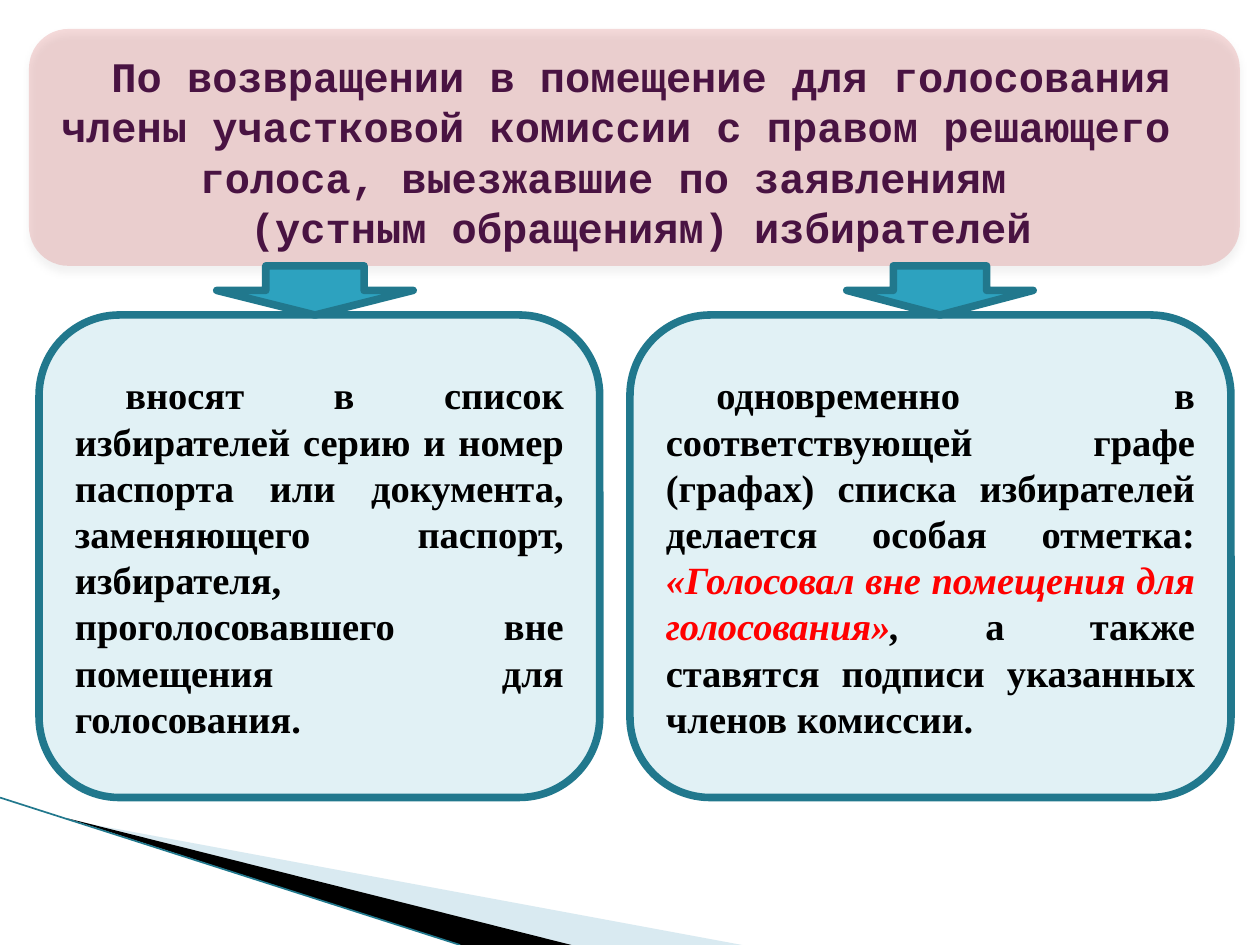
import pptx
import pptx.util
import pptx.dml.color
import pptx.enum.shapes
import pptx.enum.text
import pptx.oxml.ns
from lxml import etree

RGBColor = pptx.dml.color.RGBColor
SHAPE = pptx.enum.shapes.MSO_SHAPE
ALIGN = pptx.enum.text.PP_ALIGN
ANCHOR = pptx.enum.text.MSO_ANCHOR
qn = pptx.oxml.ns.qn

WHITE = RGBColor(0xFF, 0xFF, 0xFF)
BLACK = RGBColor(0, 0, 0)
RED = RGBColor(0xFF, 0, 0)
CRIMSON = RGBColor(0xC0, 0, 0)
PLUM = RGBColor(0x3A, 0x19, 0x53)
TEAL = RGBColor(0x2D, 0xA2, 0xBF)
DARK_TEAL = RGBColor(0x21, 0x78, 0x8D)
PALE_BLUE = RGBColor(0xA0, 0xCB, 0xDC)

CELL = pptx.util.Inches(0.1)
COLUMNS, ROWS = 100, 75

TITLE = [
    "По возвращении в помещение для голосования члены участковой комиссии "
    "с правом решающего голоса, выезжавшие по заявлениям ",
    "(устным обращениям) избирателей",
]
RECORD = [
    ("вносят в список избирателей серию и номер паспорта или документа, "
     "заменяющего паспорт, избирателя, проголосовавшего вне помещения "
     "для голосования. ", BLACK, False),
]
MARK = [
    ("одновременно в соответствующей графе (графах) списка избирателей "
     "делается особая отметка: ", BLACK, False),
    ("«Голосовал вне помещения для голосования»", RED, True),
    (", ", BLACK, True),
    ("а также ставятся подписи указанных членов комиссии.", BLACK, False),
]


def grid(*cells):
    """Turn grid cells into lengths."""
    return [round(cell * CELL) for cell in cells]


def paint(shape, color, opacity=100, outlined=False):
    """Fill a shape, with an optional thick outline and no shadow."""
    shape.shadow.inherit = False
    shape.fill.solid()
    shape.fill.fore_color.rgb = color
    if opacity < 100:
        tint = shape.element.spPr.find(qn("a:solidFill"))[0]
        etree.SubElement(tint, qn("a:alpha"), val=str(opacity * 1000))
    if outlined:
        shape.line.color.rgb = DARK_TEAL
        shape.line.width = pptx.util.Pt(4.33)
    else:
        shape.line.fill.background()


def write(para, spans, font, size, align):
    """Write bold spans into a paragraph with an indented first line."""
    properties = para._p.get_or_add_pPr()
    properties.set("marL", "0")
    properties.set("indent", str(4 * CELL))
    para.alignment = align
    para.line_spacing = 1.0
    para.space_before = pptx.util.Pt(0)
    for text, color, italic in spans:
        span = para.add_run()
        span.text = text
        span.font.name = font
        span.font.size = pptx.util.Pt(size)
        span.font.bold = True
        span.font.italic = italic
        span.font.color.rgb = color


def add_corner(page, left, top, width, height):
    """Draw the wedges and the line in the bottom left corner."""
    wedges = [
        (PALE_BLUE, 40, [(0.09, 0.15), (1, 1), (0.76, 1)]),
        (BLACK, 100, [(0.09, 0.14), (0.77, 1), (0.62, 1)]),
    ]
    for color, opacity, shares in wedges:
        points = [grid(left + x * width, top + y * height) for x, y in shares]
        builder = page.shapes.build_freeform(*points[0])
        builder.add_line_segments(points[1:])
        paint(builder.convert_to_shape(), color, opacity)
    line = page.shapes.add_connector(
        pptx.enum.shapes.MSO_CONNECTOR.STRAIGHT,
        *grid(left, top, left + 0.62 * width, top + height))
    line.line.color.rgb = DARK_TEAL
    line.line.width = pptx.util.Pt(0.95)
    etree.SubElement(line.element.spPr, qn("a:effectLst"))


def add_title(page, left, top, width, height):
    """Place the title and lay the translucent banner over it."""
    title = page.shapes.title
    title.left, title.top, title.width, title.height = grid(
        0, top + 1.2, 97.7, height - 1.2)
    frame = title.text_frame
    frame.word_wrap = True
    frame.auto_size = pptx.enum.text.MSO_AUTO_SIZE.NONE
    frame.vertical_anchor = ANCHOR.TOP
    for index, text in enumerate(TITLE):
        para = frame.add_paragraph() if index else frame.paragraphs[0]
        write(para, [(text, PLUM, False)], "Courier New", 24, ALIGN.CENTER)
    banner = page.shapes.add_shape(
        SHAPE.ROUNDED_RECTANGLE, *grid(left, top, width, height))
    paint(banner, CRIMSON, 14)
    effects = banner.element.spPr.find(qn("a:effectLst"))
    shadow = etree.SubElement(
        effects, qn("a:outerShdw"), blurRad=str(pptx.util.Pt(4)),
        dist=str(pptx.util.Pt(3)), dir="5400000", rotWithShape="0")
    shade = etree.SubElement(shadow, qn("a:srgbClr"), val=str(BLACK))
    etree.SubElement(shade, qn("a:alpha"), val="40000")


def add_card(page, spans, left, top, width, height):
    """Draw a rounded card with justified text."""
    card = page.shapes.add_shape(
        SHAPE.ROUNDED_RECTANGLE, *grid(left, top, width, height))
    paint(card, TEAL, 14, outlined=True)
    frame = card.text_frame
    frame.word_wrap = True
    frame.vertical_anchor = ANCHOR.MIDDLE
    write(frame.paragraphs[0], spans, "Times New Roman", 22, ALIGN.JUSTIFY)


def add_arrow(page, left, top, width, height):
    """Draw a wide arrow pointing down to a card."""
    arrow = page.shapes.add_shape(
        SHAPE.DOWN_ARROW, *grid(left, top, width, height))
    paint(arrow, TEAL, outlined=True)


def main():
    """Build and save the slide."""
    deck = pptx.Presentation()
    deck.slide_width, deck.slide_height = grid(COLUMNS, ROWS)
    page = deck.slides.add_slide(deck.slide_layouts[5])
    page.background.fill.solid()
    page.background.fill.fore_color.rgb = WHITE
    add_corner(page, 0, 63.3, 58.9, ROWS - 63.3)
    add_card(page, RECORD, 3.1, 25, 44.5, 38.3)
    add_card(page, MARK, 50, 25, 47.7, 38.3)
    add_title(page, 2.3, 2.3, 96.1, 18.8)
    add_arrow(page, 17.2, 21.1, 15.6, 3.9)
    add_arrow(page, 67.2, 21.1, 14.8, 3.9)
    deck.save("out.pptx")


if __name__ == "__main__":
    main()
